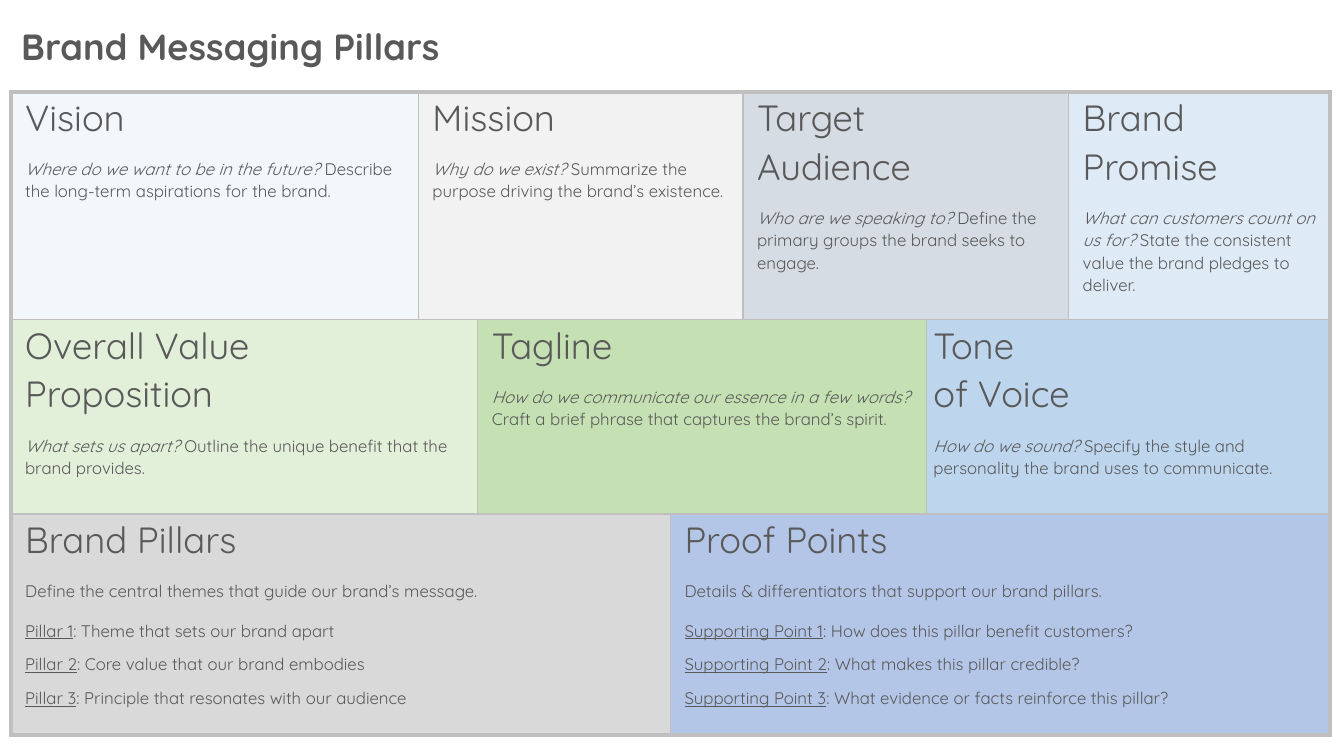
"""Build the Brand Messaging Pillars slide: a title above a table of merged cells."""
from lxml import etree
from pptx import Presentation
from pptx.dml.color import RGBColor
from pptx.enum.text import MSO_ANCHOR, PP_ALIGN
from pptx.oxml.ns import qn
from pptx.util import Inches, Pt

LEFT, MIDDLE, TOP = PP_ALIGN.LEFT, MSO_ANCHOR.MIDDLE, MSO_ANCHOR.TOP
FONT = "Quicksand"
NO_STYLE = "{2D5ABB26-0587-4C30-8999-92F81FD0307C}"
COLORS = {
    "text": "595959", "line": "BFBFBF", "vision": "F2F7FC", "mission": "F2F2F2",
    "audience": "D5DCE4", "promise": "DEEAF6", "value": "E2EFD9", "tagline": "C5E0B3",
    "tone": "BDD6EE", "pillars": "D9D9D9", "proof": "B4C6E7",
}
COLUMN_WIDTHS = [4.04, 0.59, 1.91, 0.72, 1.82, 1.41, 2.59]
ROW_HEIGHTS = [2.26, 1.93, 2.19]
THIN, THICK = 1, 3

# Each cell: columns spanned, colour, indent, heading, lines of (lead, remainder)
CELL_ROWS = [
    [
        (1, "vision", 0.13, "Vision", [
            ("Where do we want to be in the future?",
             " Describe the long-term aspirations for the brand.")]),
        (3, "mission", 0.13, "Mission", [
            ("Why do we exist?", " Summarize the purpose driving the brand’s existence.")]),
        (2, "audience", 0.13, "Target \nAudience", [
            ("Who are we speaking to?", " Define the primary groups the brand seeks to engage.")]),
        (1, "promise", 0.13, "Brand Promise", [
            ("What can customers count on us for?",
             " State the consistent value the brand pledges to deliver.")]),
    ],
    [
        (2, "value", 0.13, "Overall Value \nProposition", [
            ("What sets us apart?", " Outline the unique benefit that the brand provides.")]),
        (3, "tagline", 0.13, "Tagline", [
            ("How do we communicate our essence in a few words?",
             " Craft a brief phrase that captures the brand’s spirit.")]),
        (2, "tone", 0.06, "Tone \nof Voice", [
            ("How do we sound?",
             " Specify the style and personality the brand uses to communicate.")]),
    ],
    [
        (3, "pillars", 0.13, "Brand Pillars", [
            ("", "Define the central themes that guide our brand’s message."),
            ("Pillar 1", ": Theme that sets our brand apart"),
            ("Pillar 2", ": Core value that our brand embodies"),
            ("Pillar 3", ": Principle that resonates with our audience")]),
        (4, "proof", 0.13, "Proof Points", [
            ("", "Details & differentiators that support our brand pillars."),
            ("Supporting Point 1", ": How does this pillar benefit customers?"),
            ("Supporting Point 2", ": What makes this pillar credible?"),
            ("Supporting Point 3", ": What evidence or facts reinforce this pillar?")]),
    ],
]


def add_text(paragraph, text, size=12, bold=False, italic=False, underline=False):
    for index, part in enumerate(text.split("\n")):
        if index:
            paragraph.add_line_break()
        run = paragraph.add_run()
        run.text = part
        font = run.font
        font.name, font.size = FONT, Pt(size)
        font.bold, font.italic, font.underline = bold, italic, underline
        font.color.rgb = RGBColor.from_string(COLORS["text"])


def set_borders(cell, widths):
    properties = cell._tc.get_or_add_tcPr()
    for side, width in zip("LRTB", widths):
        line = etree.SubElement(properties, qn(f"a:ln{side}"), w=str(Pt(width)))
        solid = etree.SubElement(line, qn("a:solidFill"))
        etree.SubElement(solid, qn("a:srgbClr"), val=COLORS["line"])


presentation = Presentation()
presentation.slide_width, presentation.slide_height = Inches(13.33), Inches(7.5)
slide = presentation.slides.add_slide(presentation.slide_layouts[5])

title = slide.shapes.title
title.left, title.top, title.width, title.height = map(Inches, (0.11, 0.19, 8.08, 0.54))
title.text_frame.vertical_anchor = MIDDLE
title_paragraph = title.text_frame.paragraphs[0]
title_paragraph.alignment = LEFT
add_text(title_paragraph, "Brand Messaging Pillars", size=26, bold=True)

row_count, column_count = len(ROW_HEIGHTS), len(COLUMN_WIDTHS)
table = slide.shapes.add_table(
    row_count, column_count, Inches(0.11), Inches(0.91),
    Inches(sum(COLUMN_WIDTHS)), Inches(sum(ROW_HEIGHTS))).table
table.first_row = table.horz_banding = False
table._tbl.tblPr.find(qn("a:tableStyleId")).text = NO_STYLE
for column, width in zip(table.columns, COLUMN_WIDTHS):
    column.width = Inches(width)
for row, height in zip(table.rows, ROW_HEIGHTS):
    row.height = Inches(height)

for row_index, cells in enumerate(CELL_ROWS):
    start = 0
    for span, color, indent, heading, lines in cells:
        end = start + span
        cell = table.cell(row_index, start)
        if span > 1:
            cell.merge(table.cell(row_index, end - 1))
        outer_sides = (start == 0, end == column_count,
                       row_index == 0, row_index == row_count - 1)
        set_borders(cell, [THICK if outer else THIN for outer in outer_sides])
        cell.fill.solid()
        cell.fill.fore_color.rgb = RGBColor.from_string(COLORS[color])
        cell.margin_left = cell.margin_right = Inches(0.01)
        cell.margin_top = cell.margin_bottom = 0
        cell.vertical_anchor = TOP

        frame = cell.text_frame
        add_text(frame.paragraphs[0], heading, size=26)
        for lead, remainder in lines:
            paragraph = frame.add_paragraph()
            if lead:
                is_question = lead.endswith("?")
                add_text(paragraph, lead, italic=is_question, underline=not is_question)
            add_text(paragraph, remainder)
        for index, paragraph in enumerate(frame.paragraphs):
            paragraph.line_spacing = 1.07
            paragraph.space_after = Pt(12 if index < 2 else 8)
            paragraph._p.get_or_add_pPr().set("marL", str(Inches(indent)))
        start = end

presentation.save("out.pptx")
